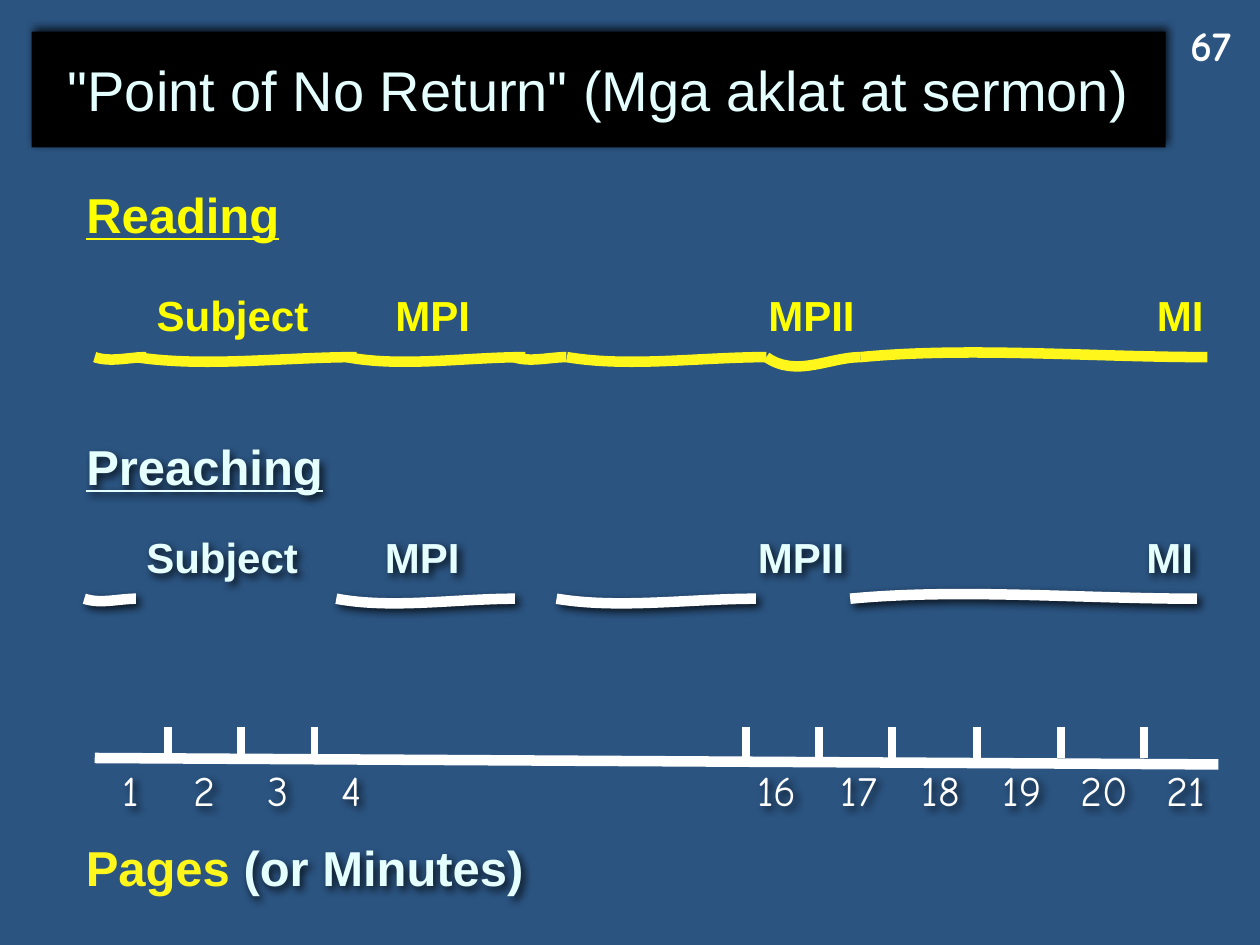
from lxml.etree import SubElement
from pptx import Presentation
from pptx.dml.color import RGBColor
from pptx.enum.shapes import MSO_CONNECTOR
from pptx.enum.text import MSO_ANCHOR, MSO_AUTO_SIZE, PP_ALIGN
from pptx.oxml.ns import qn
from pptx.util import Cm, Pt

THEME = {
    "back": "2B5481", "bar": "000000", "pale": "E5FFFF", "white": "FFFFFF",
    "yellow": "FFFF00", "gold": "FFF61C",
    "thick": Pt(6), "tick": Pt(4.5),
    "title": {"name": "Arial", "size": Pt(32), "bold": False},
    "head": {"name": "Arial", "size": Pt(28), "bold": True, "underline": True},
    "foot": {"name": "Arial", "size": Pt(28), "bold": True},
    "label": {"name": "Arial", "size": Pt(24), "bold": True},
    "page": {"name": "Comic Neue", "size": Pt(24), "bold": True},
    "number": {"name": "Comic Neue", "size": Pt(24), "bold": False},
}

TITLE = '"Point of No Return" (Mga aklat at sermon)'
PAGE = "67"
LABELS = [("Subject", 2.91, 3.56), ("MPI", 7.72, 2.01),
          ("MPII", 15.24, 2.26), ("MI", 23.07, 1.45)]
STROKES = [(1.91, 1.04, 0.11), (6.99, 3.6, 0.21),
           (11.43, 4.02, 0.21), (17.35, 6.99, -0.21)]
LINKS = [(2.74, 4.45, 0.21), (10.36, 1.06, 0.11), (15.45, 1.9, 0.42)]
ROWS = [
    {"head": "Reading", "width": 4.42, "top": 3.6, "left": 0, "drop": 0,
     "ink": "yellow", "line": "gold", "strokes": STROKES + LINKS, "shade": False},
    {"head": "Preaching", "width": 5.28, "top": 8.68, "left": -0.21, "drop": 4.87,
     "ink": "pale", "line": "white", "strokes": STROKES, "shade": True},
]
FOOT = [("Pages", 1.48, 3.43, "gold", False), ("(or Minutes)", 4.66, 6.22, "pale", True)]
NUMBERS = [(range(1, 5), 2.11, 1.48, 1.07), (range(16, 22), 14.81, 1.65, 1.7)]
TICKS = [(3.38, 1.48, 3), (15.03, 1.48, 3), (19.69, 1.69, 3)]
AXIS = 15.28


def tint(name):
    return RGBColor.from_string(THEME[name])


def shade(shape, angle):
    shape.shadow.inherit = False
    box = shape._element.spPr.find(qn("a:effectLst"))
    drop = SubElement(box, qn("a:outerShdw"), blurRad=str(Pt(5)), dist=str(Pt(2.8)),
                      dir=str(angle * 60000), algn="ctr", rotWithShape="0")
    ink = SubElement(drop, qn("a:srgbClr"), val=THEME["bar"])
    SubElement(ink, qn("a:alpha"), val="75000")


def style(run, kind, ink):
    for key, value in THEME[kind].items():
        setattr(run.font, key, value)
    run.font.color.rgb = tint(ink)


def write(shapes, text, spot, kind, ink, dark=False, align=PP_ALIGN.LEFT, wrap=False):
    box = shapes.add_textbox(*map(Cm, spot))
    frame = box.text_frame
    frame.word_wrap = wrap
    frame.auto_size = MSO_AUTO_SIZE.SHAPE_TO_FIT_TEXT
    para = frame.paragraphs[0]
    para.alignment = align
    run = para.add_run()
    run.text = text
    style(run, kind, ink)
    if dark:
        shade(box, 45)


def rule(shapes, ends, width):
    line = shapes.add_connector(MSO_CONNECTOR.STRAIGHT, *map(Cm, ends))
    line.line.color.rgb = tint("white")
    line.line.width = THEME[width]
    SubElement(line._element.spPr, qn("a:effectLst"))


def wave(shapes, left, top, width, bulge, ink, dark):
    pen = shapes.build_freeform(Cm(left), Cm(top))
    pen.add_line_segments([(Cm(left + width * 0.31), Cm(top + bulge)),
                           (Cm(left + width * 0.67), Cm(top)),
                           (Cm(left + width), Cm(top))], close=False)
    curve = pen.convert_to_shape()
    track = curve._element.spPr.find(".//" + qn("a:path"))
    bend = SubElement(track, qn("a:cubicBezTo"))
    for leg in track.findall(qn("a:lnTo")):
        bend.append(leg[0])
        track.remove(leg)
    curve.fill.background()
    curve.line.color.rgb = tint(ink)
    curve.line.width = THEME["thick"]
    curve.shadow.inherit = False
    if dark:
        shade(curve, 45)


def head(slide):
    bar = slide.shapes.title
    bar.left, bar.top, bar.width, bar.height = map(Cm, (0.64, 0.64, 22.86, 2.33))
    bar.fill.solid()
    bar.fill.fore_color.rgb = tint("bar")
    bar.line.fill.background()
    shade(bar, 283)
    frame = bar.text_frame
    frame.text = TITLE
    frame.vertical_anchor = MSO_ANCHOR.MIDDLE
    frame.paragraphs[0].alignment = PP_ALIGN.CENTER
    style(frame.paragraphs[0].runs[0], "title", "pale")
    write(slide.shapes, PAGE, (23.66, 0.26, 1.52, 1.27), "page", "white",
          align=PP_ALIGN.CENTER)


def scale(slide):
    shapes = slide.shapes.add_group_shape().shapes
    rule(shapes, (1.91, AXIS, 24.56, AXIS + 0.13), "thick")
    for start, gap, count in TICKS:
        for i in range(count):
            x = start + i * gap
            rule(shapes, (x, AXIS - 0.63, x, AXIS), "tick")
    for pages, start, gap, width in NUMBERS:
        for i, page in enumerate(pages):
            write(shapes, str(page), (start + i * gap, AXIS, width, 1.27), "number",
                  "white", True, PP_ALIGN.CENTER, True)


def rows(slide):
    shapes = slide.shapes
    for row in ROWS:
        dark, shift, drop = row["shade"], row["left"], row["drop"]
        write(shapes, row["head"], (1.49, row["top"], row["width"], 1.45),
              "head", row["ink"], dark)
        for left, width, bulge in row["strokes"]:
            wave(shapes, left + shift, 7.2 + drop, width, bulge, row["line"], dark)
        for text, left, width in LABELS:
            write(shapes, text, (left + shift, 5.72 + drop, width, 1.27),
                  "label", row["ink"], dark)
    for text, left, width, ink, dark in FOOT:
        write(shapes, text, (left, 16.76, width, 1.45), "foot", ink, dark)


def main():
    deck = Presentation()
    deck.slide_width, deck.slide_height = Cm(25.4), Cm(19.05)
    slide = deck.slides.add_slide(deck.slide_layouts[5])
    slide.background.fill.solid()
    slide.background.fill.fore_color.rgb = tint("back")
    head(slide)
    scale(slide)
    rows(slide)
    deck.save("out.pptx")


if __name__ == "__main__":
    main()
